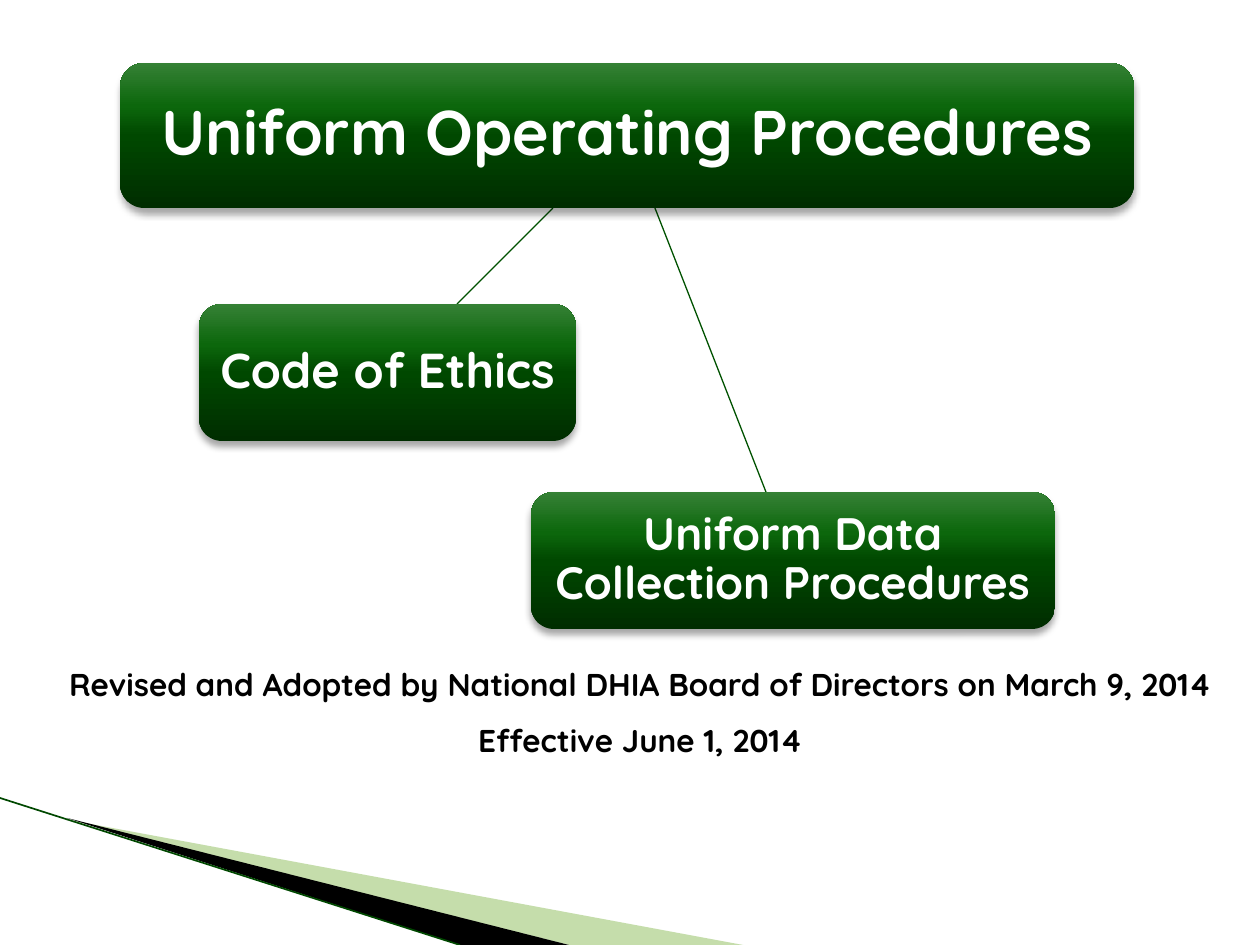
from typing import NamedTuple

from lxml.etree import SubElement
from pptx import Presentation
from pptx.dml.color import RGBColor
from pptx.enum.shapes import MSO_CONNECTOR, MSO_SHAPE
from pptx.enum.text import MSO_ANCHOR, MSO_AUTO_SIZE, PP_ALIGN
from pptx.oxml.ns import qn
from pptx.util import Pt

SCALE = 914400 / 126
FONT = "Quicksand"
GREENS = [(0, "002D00"), (50, "004800"), (70, "0C670C"), (100, "358135")]


class Wedge(NamedTuple):
    points: list[tuple[int, int]]
    color: str
    alpha: int


class Line(NamedTuple):
    start: tuple[int, int]
    end: tuple[int, int]
    color: str
    width: float


class Box(NamedTuple):
    text: str
    left: int
    top: int
    width: int
    height: int
    size: int
    inset: int


WEDGES = [
    Wedge([(69, 820), (743, 945), (569, 945)], "6EAA2E", 40),
    Wedge([(67, 818), (569, 945), (460, 945)], "000000", 100),
]
LINES = [
    Line((0, 798), (460, 945), "004800", 0.95),
    Line((553, 208), (457, 304), "005200", 0.75),
    Line((655, 208), (766, 492), "005200", 0.75),
]
BOXES = [
    Box("Uniform Operating Procedures", 120, 63, 1014, 145, 36, 13),
    Box("Code of Ethics", 199, 304, 377, 137, 28, 10),
    Box("Uniform Data Collection Procedures", 531, 492, 524, 137, 26, 9),
]
NOTES = [
    "Revised and Adopted by National DHIA Board of Directors on March 9, 2014",
    "Effective June 1, 2014",
]


def px(count: int) -> int:
    return round(count * SCALE)


def rgb(color: str) -> RGBColor:
    return RGBColor.from_string(color)


def add_color(parent, color: str, alpha: int = 100) -> None:
    tint = SubElement(parent, qn("a:srgbClr"), val=color)
    if alpha < 100:
        SubElement(tint, qn("a:alpha"), val=str(alpha * 1000))


def style(para, size: int, color: str) -> None:
    para.alignment = PP_ALIGN.CENTER
    para.font.name = FONT
    para.font.size = Pt(size)
    para.font.bold = True
    para.font.color.rgb = rgb(color)


def draw_wedge(slide, wedge: Wedge) -> None:
    pen = slide.shapes.build_freeform(*wedge.points[0], scale=SCALE)
    pen.add_line_segments(wedge.points[1:], close=True)
    shape = pen.convert_to_shape()
    shape.shadow.inherit = False
    shape.line.fill.background()
    shape.fill.solid()
    shape.fill.fore_color.rgb = rgb(wedge.color)
    if wedge.alpha < 100:
        tint = shape._element.spPr.find(".//" + qn("a:srgbClr"))
        SubElement(tint, qn("a:alpha"), val=str(wedge.alpha * 1000))


def draw_line(slide, line: Line) -> None:
    ends = [px(n) for n in line.start + line.end]
    link = slide.shapes.add_connector(MSO_CONNECTOR.STRAIGHT, *ends)
    link.line.color.rgb = rgb(line.color)
    link.line.width = Pt(line.width)
    SubElement(link._element.spPr, qn("a:effectLst"))


def paint(shape) -> None:
    shape.line.fill.background()
    shape.fill.gradient()
    shape.fill.gradient_angle = 90
    props = shape._element.spPr
    stops = props.find(".//" + qn("a:gsLst"))
    for stop in list(stops):
        stops.remove(stop)
    for place, color in GREENS:
        add_color(SubElement(stops, qn("a:gs"), pos=str(place * 1000)), color)
    shape.shadow.inherit = False
    shade = SubElement(
        props.find(qn("a:effectLst")), qn("a:outerShdw"),
        blurRad=str(Pt(4)), dist=str(Pt(3)), dir="5400000", rotWithShape="0",
    )
    add_color(shade, "000000", 35)


def draw_box(slide, box: Box) -> None:
    area = [px(n) for n in (box.left, box.top, box.width, box.height)]
    shape = slide.shapes.add_shape(MSO_SHAPE.ROUNDED_RECTANGLE, *area)
    paint(shape)
    frame = shape.text_frame
    frame.word_wrap = True
    frame.vertical_anchor = MSO_ANCHOR.MIDDLE
    frame.margin_left = frame.margin_right = px(box.inset)
    frame.margin_top = frame.margin_bottom = px(box.inset)
    para = frame.paragraphs[0]
    para.text = box.text
    para.line_spacing = 0.9
    style(para, box.size, "FFFFFF")


def draw_notes(slide) -> None:
    area = [px(n) for n in (47, 659, 1187, 108)]
    frame = slide.shapes.add_textbox(*area).text_frame
    frame.word_wrap = False
    frame.auto_size = MSO_AUTO_SIZE.SHAPE_TO_FIT_TEXT
    frame.text = "\n".join(NOTES)
    for para in frame.paragraphs:
        style(para, 18, "000000")
    frame.paragraphs[1].space_before = Pt(10)


def main() -> None:
    deck = Presentation()
    deck.slide_width, deck.slide_height = px(1260), px(945)
    slide = deck.slides.add_slide(deck.slide_layouts[6])
    for wedge in WEDGES:
        draw_wedge(slide, wedge)
    for line in LINES:
        draw_line(slide, line)
    for box in BOXES:
        draw_box(slide, box)
    draw_notes(slide)
    deck.save("out.pptx")


if __name__ == "__main__":
    main()
